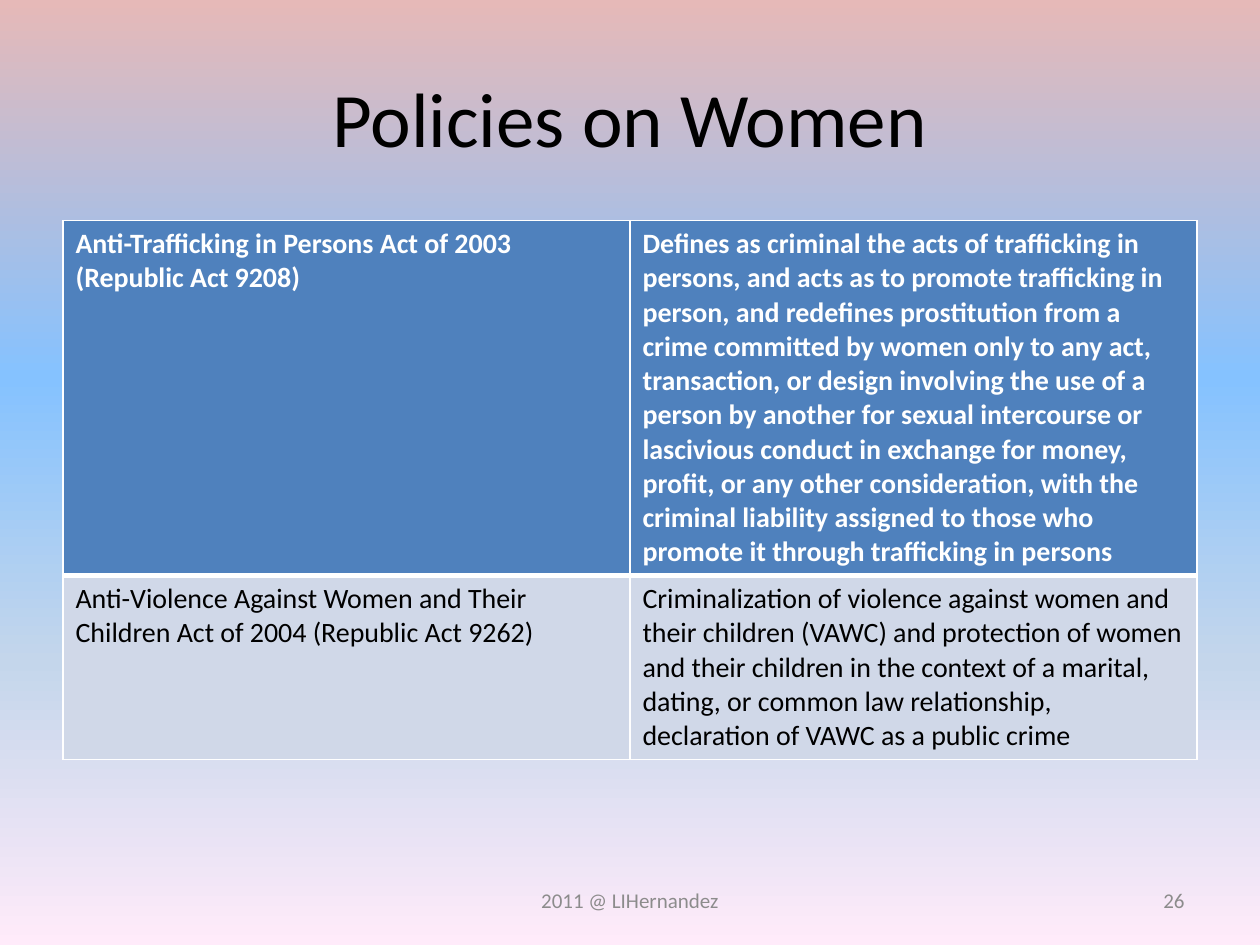
from dataclasses import dataclass

from lxml import etree
from pptx import Presentation
from pptx.dml.color import RGBColor
from pptx.enum.text import MSO_ANCHOR, PP_ALIGN
from pptx.oxml.ns import qn
from pptx.slide import Slide
from pptx.table import _Cell
from pptx.text.text import TextFrame
from pptx.util import Cm, Pt

LEFT, CENTER, RIGHT = PP_ALIGN.LEFT, PP_ALIGN.CENTER, PP_ALIGN.RIGHT
MIDDLE = MSO_ANCHOR.MIDDLE
TITLE_ONLY = 5


@dataclass(frozen=True)
class Theme:
    font: str = "Calibri"
    ink: str = "000000"
    white: str = "FFFFFF"
    gray: str = "8C8C8C"
    blue: str = "4F81BD"
    pale: str = "D0D8E8"
    title: int = 44
    body: int = 16
    small: int = 12
    thin: int = 1
    thick: int = 3
    sky: tuple = ((0, "E6B9B8"), (40, "85C2FF"), (70, "C4D6EB"), (100, "FFEBFA"))


@dataclass(frozen=True)
class Box:
    left: float
    top: float
    width: float
    height: float

    def place(self) -> tuple:
        return Cm(self.left), Cm(self.top), Cm(self.width), Cm(self.height)


@dataclass(frozen=True)
class Note:
    text: str
    box: Box
    align: PP_ALIGN


@dataclass(frozen=True)
class Row:
    law: str
    gist: str
    height: float
    fill: str
    ink: str
    bold: bool
    top: int
    base: int


THEME = Theme()
TITLE = Box(1.27, 0.76, 22.86, 3.18)
GRID = Box(1.27, 4.45, 22.86, 10.67)
ROWS = (
    Row("Anti-Trafficking in Persons Act of 2003 (Republic Act 9208)",
        "Defines as criminal the acts of trafficking in persons, and acts as to "
        "promote trafficking in person, and redefines prostitution from a crime "
        "committed by women only to any act, transaction, or design involving the "
        "use of a person by another for sexual intercourse or lascivious conduct in "
        "exchange for money, profit, or any other consideration, with the criminal "
        "liability assigned to those who promote it through trafficking in persons",
        7.1, THEME.blue, THEME.white, True, THEME.thin, THEME.thick),
    Row("Anti-Violence Against Women and Their Children Act of 2004 "
        "(Republic Act 9262)",
        "Criminalization of violence against women and their children (VAWC) and "
        "protection of women and their children in the context of a marital, dating, "
        "or common law relationship, declaration of VAWC as a public crime",
        3.57, THEME.pale, THEME.ink, False, THEME.thick, THEME.thin),
)
NOTES = (
    Note("2011 @ LIHernandez", Box(8.68, 17.65, 8.04, 1.01), CENTER),
    Note("26", Box(18.2, 17.65, 5.93, 1.01), RIGHT),
)


def write(frame: TextFrame, text: str, size: int, color: str,
          align: PP_ALIGN = LEFT, bold: bool = False) -> None:
    para = frame.paragraphs[0]
    para.alignment = align
    run = para.add_run()
    run.text = text
    font = run.font
    font.name, font.size, font.bold = THEME.font, Pt(size), bold
    font.color.rgb = RGBColor.from_string(color)


def paint_sky(slide: Slide) -> None:
    fill = slide.background.fill
    fill.gradient()
    fill.gradient_angle = 270
    stops = slide.element.find(".//" + qn("a:gsLst"))
    for stop in list(stops):
        stops.remove(stop)
    for spot, color in THEME.sky:
        stop = etree.SubElement(stops, qn("a:gs"), pos=str(spot * 1000))
        etree.SubElement(stop, qn("a:srgbClr"), val=color)


def edge(cell: _Cell, side: str, width: int) -> None:
    props = cell._tc.get_or_add_tcPr()
    line = etree.SubElement(props, qn(f"a:ln{side}"), w=str(Pt(width)))
    fill = etree.SubElement(line, qn("a:solidFill"))
    etree.SubElement(fill, qn("a:srgbClr"), val=THEME.white)


def draw_cell(cell: _Cell, text: str, row: Row) -> None:
    """Draw the edges before the fill, as the file format orders them."""
    sides = {"L": THEME.thin, "R": THEME.thin, "T": row.top, "B": row.base}
    for side, width in sides.items():
        edge(cell, side, width)
    cell.fill.solid()
    cell.fill.fore_color.rgb = RGBColor.from_string(row.fill)
    write(cell.text_frame, text, THEME.body, row.ink, bold=row.bold)


def draw_table(slide: Slide) -> None:
    table = slide.shapes.add_table(len(ROWS), 2, *GRID.place()).table
    for line, row in zip(table.rows, ROWS):
        line.height = Cm(row.height)
        for cell, text in zip(line.cells, (row.law, row.gist)):
            draw_cell(cell, text, row)


def draw_title(slide: Slide) -> None:
    title = slide.shapes.title
    title.left, title.top, title.width, title.height = TITLE.place()
    title.text_frame.vertical_anchor = MIDDLE
    write(title.text_frame, "Policies on Women", THEME.title, THEME.ink, CENTER)


def draw_note(slide: Slide, note: Note) -> None:
    frame = slide.shapes.add_textbox(*note.box.place()).text_frame
    frame.word_wrap = True
    frame.vertical_anchor = MIDDLE
    write(frame, note.text, THEME.small, THEME.gray, note.align)


def main() -> None:
    deck = Presentation()
    deck.slide_width, deck.slide_height = Cm(25.4), Cm(19.05)
    slide = deck.slides.add_slide(deck.slide_layouts[TITLE_ONLY])
    paint_sky(slide)
    draw_title(slide)
    draw_table(slide)
    for note in NOTES:
        draw_note(slide, note)
    deck.save("out.pptx")


if __name__ == "__main__":
    main()
